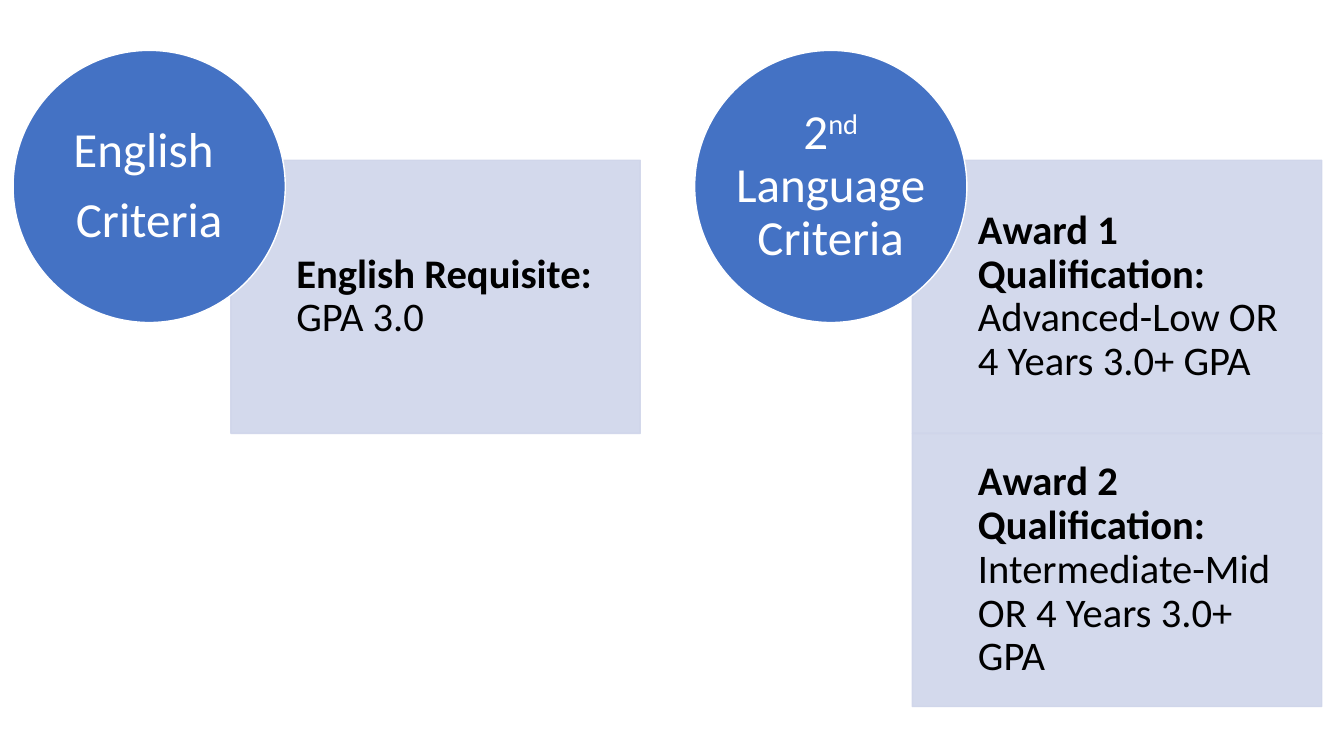
from dataclasses import dataclass

from pptx import Presentation
from pptx.dml.color import RGBColor as RGB
from pptx.enum.shapes import MSO_SHAPE as Kind
from pptx.enum.text import MSO_ANCHOR as Anchor, PP_ALIGN as Align
from pptx.oxml import parse_xml
from pptx.oxml.ns import nsdecls, qn
from pptx.util import Inches, Pt


@dataclass(frozen=True)
class Theme:
    font: str = "Calibri"
    blue: RGB = RGB(0x44, 0x72, 0xC4)
    pale: RGB = RGB(0xCF, 0xD5, 0xEA)
    white: RGB = RGB(0xFF, 0xFF, 0xFF)
    black: RGB = RGB(0, 0, 0)
    head: int = 35
    body: int = 29


theme = Theme()
deck = Presentation()
deck.slide_width, deck.slide_height = Inches(13.33), Inches(7.5)
slide = deck.slides.add_slide(deck.slide_layouts[6])


def add(kind, place, fill, edge, pads):
    shape = slide.shapes.add_shape(kind, *map(Inches, place))
    shape.shadow.inherit = False
    shape.fill.solid()
    shape.fill.fore_color.rgb = fill
    shape.line.color.rgb = edge
    shape.line.width = Pt(1)
    frame = shape.text_frame
    frame.word_wrap = True
    frame.vertical_anchor = Anchor.MIDDLE
    for side, pad in zip(("left", "top", "right", "bottom"), pads):
        setattr(frame, f"margin_{side}", Inches(pad))
    return shape


def write(shape, paras, size, color, align):
    frame = shape.text_frame
    for i, parts in enumerate(paras):
        para = frame.add_paragraph() if i else frame.paragraphs[0]
        form = {"alignment": align, "line_spacing": 0.9,
                "space_after": Pt(round(size * 0.35))}
        for name, value in form.items():
            setattr(para, name, value)
        for text, style in parts:
            run = para.add_run()
            run.text = text
            look = {"name": theme.font, "size": Pt(size), "bold": style == "bold"}
            for name, value in look.items():
                setattr(run.font, name, value)
            run.font.color.rgb = color
            if style == "super":
                run._r.get_or_add_rPr().set("baseline", "30000")


# Each group: circle heading, then the panels stacked under it
groups = [
    ([[("English ", "")], [("Criteria", "")]],
     [("English Requisite:", " GPA 3.0")]),
    ([[("2", ""), ("nd", "super"), (" Language Criteria", "")]],
     [("Award 1 Qualification:", " Advanced-Low OR 4 Years 3.0+ GPA"),
      ("Award 2 Qualification:", " Intermediate-Mid OR 4 Years 3.0+ GPA")]),
]
start, pitch = 0.13, 6.76
disc, wide, high = 2.7, 4.06, 2.71

for col, (title, panels) in enumerate(groups):
    left = start + col * pitch

    # Translucent panels
    for row, (label, rule) in enumerate(panels):
        place = (left + 2.16, 1.59 + row * high, wide, high)
        panel = add(Kind.RECTANGLE, place, theme.pale, theme.pale,
                    (0.65, 0.23, 0.23, 0.23))
        for tint in panel._element.spPr.iter(qn("a:srgbClr")):
            tint.append(parse_xml(f'<a:alpha {nsdecls("a")} val="90000"/>'))
        write(panel, [[(label, "bold"), (rule, "")]],
              theme.body, theme.black, Align.LEFT)

    # Heading circle in front
    circle = add(Kind.OVAL, (left, 0.5, disc, disc), theme.blue, theme.white,
                 (0, 0, 0, 0))
    write(circle, title, theme.head, theme.white, Align.CENTER)

deck.save("out.pptx")
